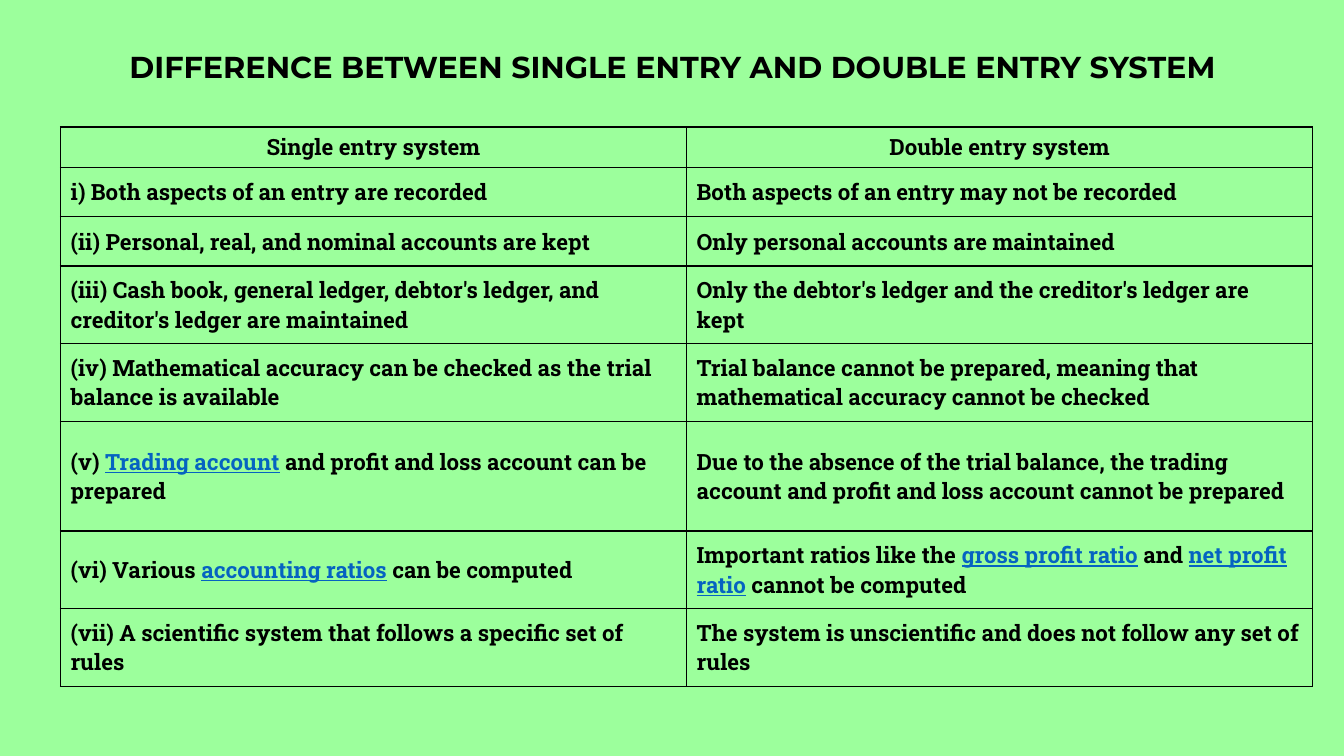
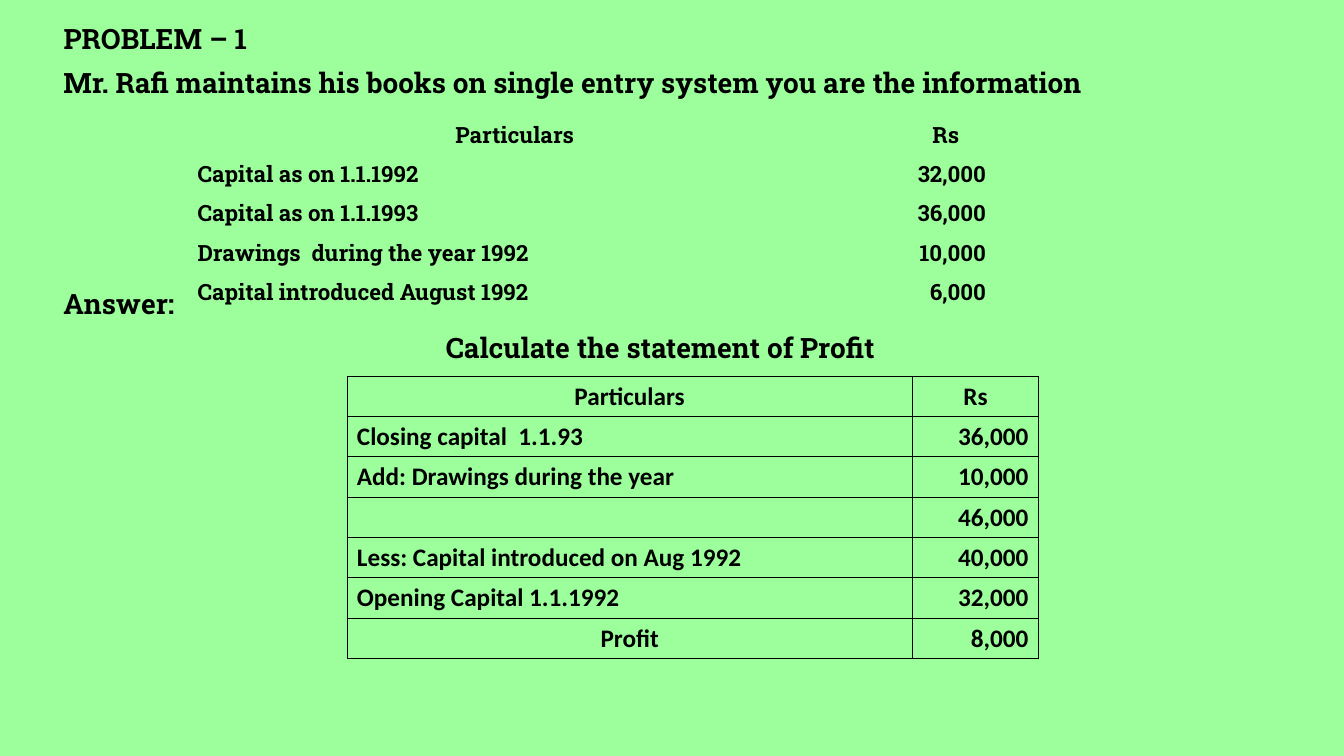
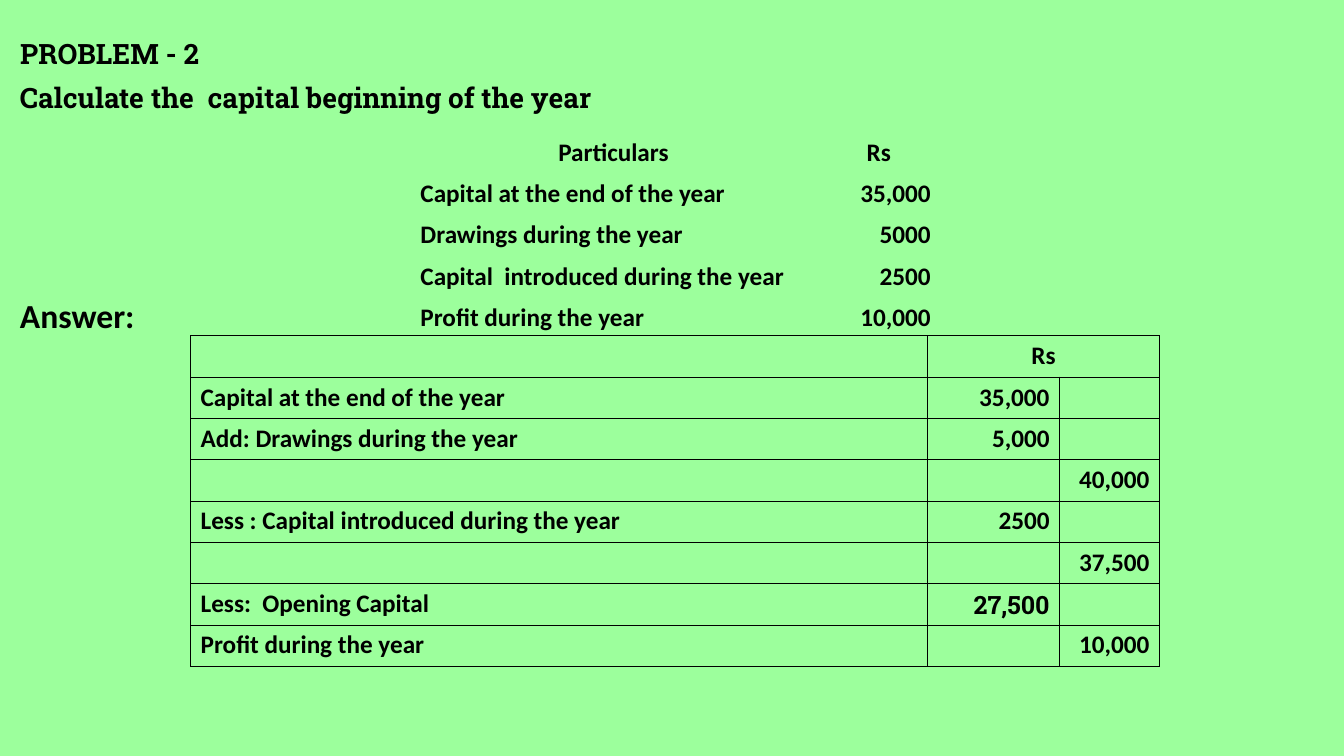
"""Build three slides on single entry and double entry bookkeeping."""
import lxml.etree
import pptx
import pptx.dml.color
import pptx.enum.text
import pptx.oxml.ns
import pptx.util

ALIGN = pptx.enum.text.PP_ALIGN
LEFT, MID, RIGHT = ALIGN.LEFT, ALIGN.CENTER, ALIGN.RIGHT
ANCHOR = pptx.enum.text.MSO_ANCHOR
INCH = pptx.util.Inches


class Theme:
    """Colours, fonts and type sizes."""
    back, ink, link = "9CFF9C", "000000", "0563C1"
    head, slab, sans = "Montserrat", "Roboto Slab", "Calibri"
    title, lead, answer, small, body = 21.6, 20, 24, 16, 18
    line = 0.44


SYSTEMS = [
    ("Single entry system", "Double entry system"),
    ("i) Both aspects of an entry are recorded",
     "Both aspects of an entry may not be recorded"),
    ("(ii) Personal, real, and nominal accounts are kept",
     "Only personal accounts are maintained"),
    ("(iii) Cash book, general ledger, debtor's ledger, and creditor's ledger are maintained",
     "Only the debtor's ledger and the creditor's ledger are kept"),
    ("(iv) Mathematical accuracy can be checked as the trial balance is available",
     "Trial balance cannot be prepared, meaning that mathematical accuracy cannot be checked"),
    ("(v) *Trading account* and profit and loss account can be prepared",
     "Due to the absence of the trial balance, the trading account and profit and loss "
     "account cannot be prepared"),
    ("(vi) Various *accounting ratios* can be computed",
     "Important ratios like the *gross profit ratio* and *net profit ratio* cannot be computed"),
    ("(vii) A scientific system that follows a specific set of rules",
     "The system is unscientific and does not follow any set of rules"),
]
RAFI = [
    ("Particulars", ("Rs", {"indent": 0.63})),
    ("Capital as on 1.1.1992", "32,000"),
    ("Capital as on 1.1.1993", "36,000"),
    ("Drawings  during the year 1992", "10,000"),
    ("Capital introduced August 1992", "6,000"),
]
PROFIT = [
    ("Particulars", "Rs"),
    ("Closing capital  1.1.93", "36,000"),
    ("Add: Drawings during the year", "10,000"),
    ("", "46,000"),
    ("Less: Capital introduced on Aug 1992", "40,000"),
    ("Opening Capital 1.1.1992", "32,000"),
    (("Profit", {"align": MID}), "8,000"),
]
GIVEN = [
    ("Particulars", "Rs"),
    ("Capital at the end of the year", "35,000"),
    ("Drawings during the year", "5000"),
    ("Capital  introduced during the year", "2500"),
    ("Profit during the year", "10,000"),
]
CAPITAL = [
    ("", "Rs", ""),
    ("Capital at the end of the year", "35,000", ""),
    ("Add: Drawings during the year", "5,000", ""),
    ("", "", "40,000"),
    ("Less : Capital introduced during the year", "2500", ""),
    ("", "", "37,500"),
    ("Less:  Opening Capital", ("27,500", {"font": Theme.slab}), ""),
    ("Profit during the year", "", "10,000"),
]


def write(frame, text, font=Theme.slab, size=Theme.lead, align=LEFT):
    """Fill a frame with bold text; parts between asterisks look like links."""
    par = frame.paragraphs[0]
    par.alignment, par.line_spacing = align, 1.0
    for pos, part in enumerate(text.split("*")):
        if part:
            run = par.add_run()
            run.text = part
            run.font.name, run.font.size, run.font.bold = font, pptx.util.Pt(size), True
            tint = Theme.link if pos % 2 else Theme.ink
            run.font.color.rgb = pptx.dml.color.RGBColor.from_string(tint)
            run.font.underline = bool(pos % 2)


def place(shape, left, mid, width, text, high=Theme.line, **style):
    """Set a one-line shape around a middle height and write in it."""
    shape.left, shape.top = INCH(left), INCH(mid - high / 2)
    shape.width, shape.height = INCH(width), INCH(high)
    shape.text_frame.word_wrap = True
    shape.text_frame.vertical_anchor = ANCHOR.MIDDLE
    write(shape.text_frame, text, **style)


def label(slide, *args, **style):
    """Add a text box."""
    place(slide.shapes.add_textbox(0, 0, 0, 0), *args, **style)


def frame_cell(cell, width):
    """Draw the four borders of a cell, or none for zero width."""
    props = cell._tc.get_or_add_tcPr()
    for pos, side in enumerate(("lnL", "lnR", "lnT", "lnB")):
        line = lxml.etree.Element(pptx.oxml.ns.qn("a:" + side), w=str(int(width * 12700)))
        props.insert(pos, line)
        if width:
            fill = lxml.etree.SubElement(line, pptx.oxml.ns.qn("a:solidFill"))
            lxml.etree.SubElement(fill, pptx.oxml.ns.qn("a:srgbClr"), val=Theme.ink)
        else:
            lxml.etree.SubElement(line, pptx.oxml.ns.qn("a:noFill"))


def grid(slide, rows, left, top, cols, highs, border=0, rest=RIGHT, anchor=ANCHOR.TOP, **style):
    """Add a table whose first row is centred and whose first column is left-aligned."""
    table = slide.shapes.add_table(len(rows), len(cols), INCH(left), INCH(top),
                                   INCH(sum(cols)), INCH(sum(highs))).table
    table.first_row = table.horz_banding = False
    for col, width in zip(table.columns, cols):
        col.width = INCH(width)
    for y, row in enumerate(rows):
        table.rows[y].height = INCH(highs[y])
        for x, item in enumerate(row):
            text, extra = item if isinstance(item, tuple) else (item, {})
            look = {"align": MID if y == 0 else rest if x else LEFT, **style, **extra}
            cell = table.cell(y, x)
            cell.margin_left = INCH(look.pop("indent", 0.1))
            cell.vertical_anchor = anchor if y else ANCHOR.TOP
            cell.fill.background()
            frame_cell(cell, border)
            write(cell.text_frame, text, **look)
    return table


def main():
    """Build and save the deck."""
    deck = pptx.Presentation()
    deck.slide_width, deck.slide_height = INCH(13.33), INCH(7.5)
    fill = deck.slide_master.background.fill
    fill.solid()
    fill.fore_color.rgb = pptx.dml.color.RGBColor.from_string(Theme.back)
    first, second, third = [deck.slides.add_slide(deck.slide_layouts[5]) for _ in range(3)]
    small = {"font": Theme.slab, "size": Theme.small}
    sans = {"font": Theme.sans, "size": Theme.body}

    place(first.shapes.title, 0.92, 0.66, 11.5,
          "DIFFERENCE BETWEEN SINGLE ENTRY AND DOUBLE ENTRY SYSTEM",
          high=0.79, font=Theme.head, size=Theme.title, align=MID)
    grid(first, SYSTEMS, 0.6, 1.26, [6.21] * 2, [0.4] + [0.49] * 2 + [0.77] * 2 + [1.09] + [0.77] * 2,
         border=1, rest=LEFT, anchor=ANCHOR.MIDDLE, **small)

    place(second.shapes.title, 0.53, 0.38, 12.38, "PROBLEM – 1")
    label(second, 0.53, 0.38 + Theme.line, 12.38,
          "Mr. Rafi maintains his books on single entry system you are the information")
    label(second, 0.53, 3.01, 1.4, "Answer:")
    label(second, 0.53, 3.01 + Theme.line, 12.04, "Calculate the statement of Profit", align=MID)
    grid(second, RAFI, 1.86, 1.14, [6.49, 1.53], [0.39] * len(RAFI), **small)
    grid(second, PROFIT, 3.44, 3.73, [5.61, 1.25], [0.4] * len(PROFIT), border=0.5, **sans)

    place(third.shapes.title, 0.1, 0.53, 12.9, "PROBLEM - 2")
    label(third, 0.1, 0.53 + Theme.line, 12.9, "Calculate the  capital beginning of the year")
    label(third, 0.1, 3.13, 2, "Answer:", font=Theme.sans, size=Theme.answer)
    grid(third, GIVEN, 4.07, 1.31, [4.03, 1.23], [0.41] * len(GIVEN), **sans)
    table = grid(third, CAPITAL, 1.89, 3.33, [7.31, 1.31, 0.99], [0.41] * len(CAPITAL),
                 border=0.5, **sans)
    table.cell(0, 1).merge(table.cell(0, 2))
    deck.save("out.pptx")


if __name__ == "__main__":
    main()
